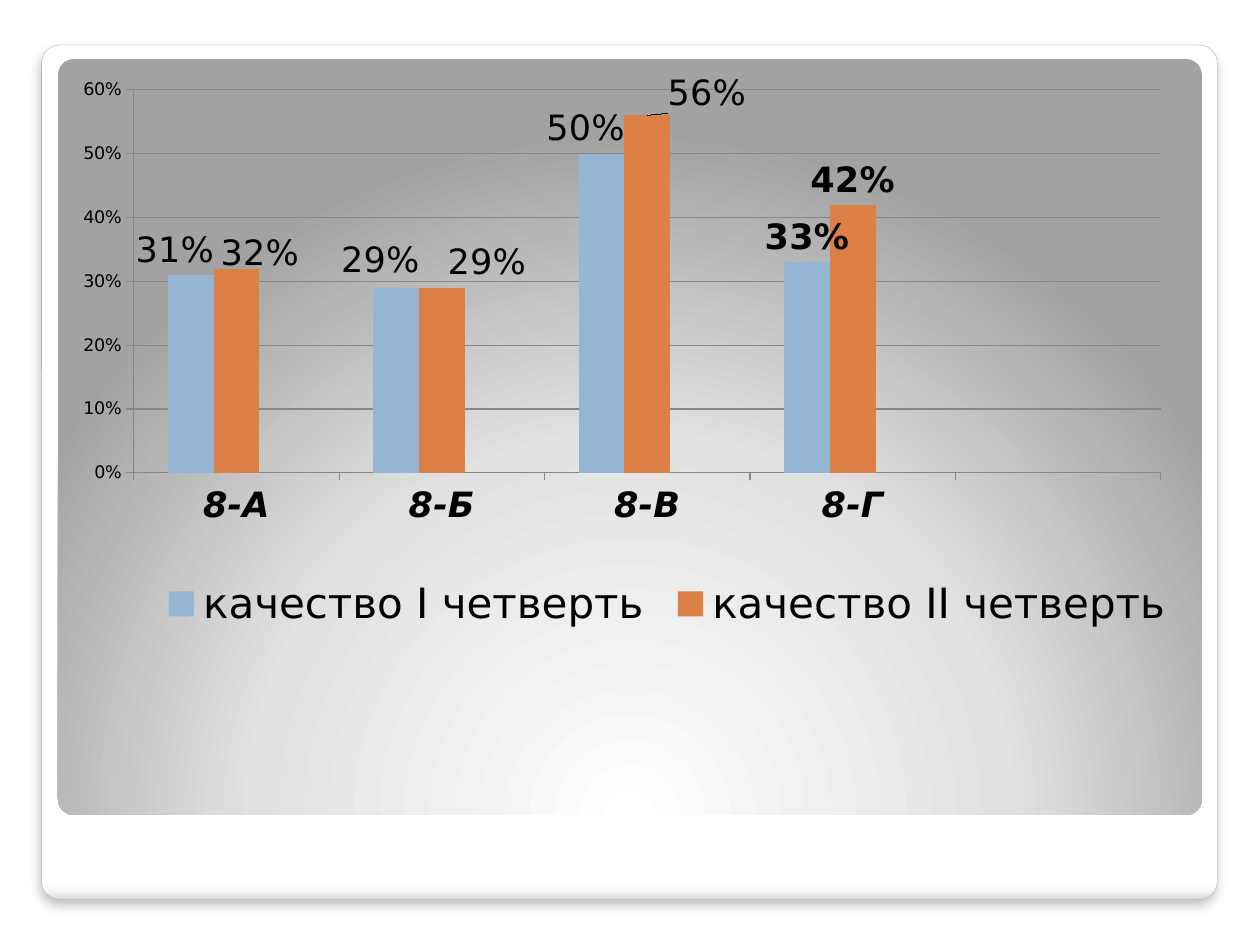
from dataclasses import dataclass

from pptx import Presentation
from pptx import util as u
from pptx.chart.data import CategoryChartData
from pptx.dml.color import RGBColor
from pptx.enum import chart as charts, shapes
from pptx.oxml import parse_xml
from pptx.oxml.ns import nsdecls, qn

COLORS = {
    "text": "000000",
    "grid": "878787",
    "border": "A4A4A4",
    "first": "94B6D2",
    "second": "DD8047",
    "third": "A5AB81",
}
FONT = "DejaVu Sans"
CLASSES = ["8-А", "8-Б", "8-В", "8-Г", ""]


@dataclass
class Panel:
    """A rounded background panel; lengths in centimetres."""
    left: float
    top: float
    width: float
    height: float
    stops: list
    direction: str
    framed: bool = False


@dataclass
class Term:
    """One quarter's results; shifts move the first labels, as chart fractions."""
    name: str
    values: list
    color: str
    shifts: list


PANELS = [
    Panel(0.84, 0.91, 23.7, 17.22,
          [(0, "FFFFFF"), (98, "FFFFFF"), (99, "F7F7F7"), (100, "DADADA")],
          '<a:lin ang="5400000" scaled="0"/>', framed=True),
    Panel(1.17, 1.19, 23.06, 15.24,
          [(0, "FFFFFF"), (55, "E1E1E1"), (100, "A2A2A2")],
          '<a:path path="circle"><a:fillToRect l="50000" t="175000" '
          'r="50000" b="-75000"/></a:path>'),
]
TERMS = [
    Term("качество I четверть", [0.31, 0.29, 0.5, 0.33, None], "first",
         [(-0.014, 0), (-0.014, -0.005), (-0.014, 0)]),
    Term("качество II четверть", [0.32, 0.29, 0.56, 0.42, None], "second",
         [(0.021, 0.017), (0.04, 0), (0.053, 0.005)]),
    Term("Series 3", [None] * 5, "third", []),
]


def rgb(name: str) -> RGBColor:
    return RGBColor.from_string(COLORS[name])


def style(font, **values) -> None:
    for key, value in {"name": FONT, **values}.items():
        setattr(font, key, value)
    font.color.rgb = rgb("text")


def draw_panel(page, panel: Panel) -> None:
    box = page.shapes.add_shape(
        shapes.MSO_SHAPE.ROUNDED_RECTANGLE,
        *map(u.Cm, (panel.left, panel.top, panel.width, panel.height)))
    box.adjustments[0] = 0.021
    box.shadow.inherit = False
    box.fill.gradient()
    properties = box._element.spPr
    stops = "".join(f'<a:gs pos="{place * 1000}"><a:srgbClr val="{color}"/></a:gs>'
                    for place, color in panel.stops)
    properties.replace(properties.find(qn("a:gradFill")), parse_xml(
        f'<a:gradFill {nsdecls("a")} rotWithShape="1"><a:gsLst>{stops}</a:gsLst>'
        f'{panel.direction}</a:gradFill>'))
    if not panel.framed:
        box.line.fill.background()
        return
    box.line.color.rgb = rgb("border")
    box.line.width = u.Pt(0.16)
    properties.find(qn("a:effectLst")).append(parse_xml(
        f'<a:outerShdw {nsdecls("a")} blurRad="{u.Pt(6)}" dist="{u.Pt(4)}" '
        'dir="5400000" algn="t" rotWithShape="0"><a:srgbClr val="000000">'
        '<a:alpha val="25000"/></a:srgbClr></a:outerShdw>'))


def manual_layout(modes: dict, **values):
    """Chart layout element from mode names and x, y, w, h fractions."""
    fields = "".join(f'<c:{key} val="{value}"/>'
                     for key, value in {**modes, **values}.items())
    return parse_xml(f'<c:layout {nsdecls("c")}><c:manualLayout>{fields}'
                     '</c:manualLayout></c:layout>')


def drop_layout(element) -> None:
    for layout in element.findall(qn("c:layout")):
        element.remove(layout)


def style_term(series, term: Term) -> None:
    series.format.fill.solid()
    series.format.fill.fore_color.rgb = rgb(term.color)
    series.invert_if_negative = False
    if not term.shifts:
        return
    labels = series.data_labels
    formats = {"show_value": True, "number_format": "0%",
               "number_format_is_linked": False,
               "position": charts.XL_LABEL_POSITION.OUTSIDE_END}
    for key, value in formats.items():
        setattr(labels, key, value)
    style(labels.font, size=u.Pt(20), bold=True)
    for index, (x, y) in enumerate(term.shifts):
        label = series.points[index].data_label
        span = label.text_frame.paragraphs[0].add_run()
        span.text = f"{term.values[index]:.0%}"
        style(span.font, size=u.Pt(20), bold=False)
        label.position = charts.XL_LABEL_POSITION.OUTSIDE_END
        element = labels._element.xpath(f'c:dLbl[c:idx/@val="{index}"]')[0]
        drop_layout(element)
        element.find(qn("c:idx")).addnext(manual_layout({}, x=x, y=y))


def style_axes(chart) -> None:
    values, classes = chart.value_axis, chart.category_axis
    values.minimum_scale, values.maximum_scale = 0, 0.6
    values.major_unit = 0.1
    values.has_major_gridlines = True
    values.tick_labels.number_format = "0%"
    values.tick_labels.number_format_is_linked = False
    style(values.tick_labels.font, size=u.Pt(10))
    style(classes.tick_labels.font, size=u.Pt(20), bold=True, italic=True)
    for axis in (values, classes):
        axis.major_tick_mark = charts.XL_TICK_MARK.OUTSIDE
    for part in (values, classes, values.major_gridlines):
        part.format.line.color.rgb = rgb("grid")
        part.format.line.width = u.Pt(0.75)


def style_legend(chart) -> None:
    chart.has_legend = True
    legend = chart.legend
    legend.position = charts.XL_LEGEND_POSITION.RIGHT
    legend.include_in_layout = False
    style(legend.font, size=u.Pt(24))
    element = legend._element
    drop_layout(element)
    hidden = parse_xml(f'<c:legendEntry {nsdecls("c")}><c:idx val="2"/>'
                       '<c:delete val="1"/></c:legendEntry>')
    element.find(qn("c:legendPos")).addnext(hidden)
    hidden.addnext(manual_layout({"xMode": "edge", "yMode": "edge"},
                                 x=0.07, y=0.86, w=0.92, h=0.12))


def draw_chart(page) -> None:
    data = CategoryChartData(number_format="0%")
    data.categories = CLASSES
    for term in TERMS:
        data.add_series(term.name, term.values)
    chart = page.shapes.add_chart(
        charts.XL_CHART_TYPE.COLUMN_CLUSTERED,
        *map(u.Cm, (1.4, 1.47, 22.73, 11.63)), data).chart
    chart.has_title = False
    style(chart.font, size=u.Pt(10))
    plot = chart.plots[0]
    plot.gap_width, plot.overlap = 150, 0
    plot.vary_by_categories = False
    for series, term in zip(plot.series, TERMS):
        style_term(series, term)
    style_axes(chart)
    style_legend(chart)
    area = chart._chartSpace.chart.plotArea
    drop_layout(area)
    area.insert(0, manual_layout(
        {"layoutTarget": "inner", "xMode": "edge", "yMode": "edge"},
        x=0.057, y=0.022, w=0.911, h=0.669))


def main() -> None:
    deck = Presentation()
    deck.slide_width, deck.slide_height = u.Cm(25.4), u.Cm(19.05)
    page = deck.slides.add_slide(deck.slide_layouts[6])
    for panel in PANELS:
        draw_panel(page, panel)
    draw_chart(page)
    deck.save("out.pptx")


if __name__ == "__main__":
    main()
